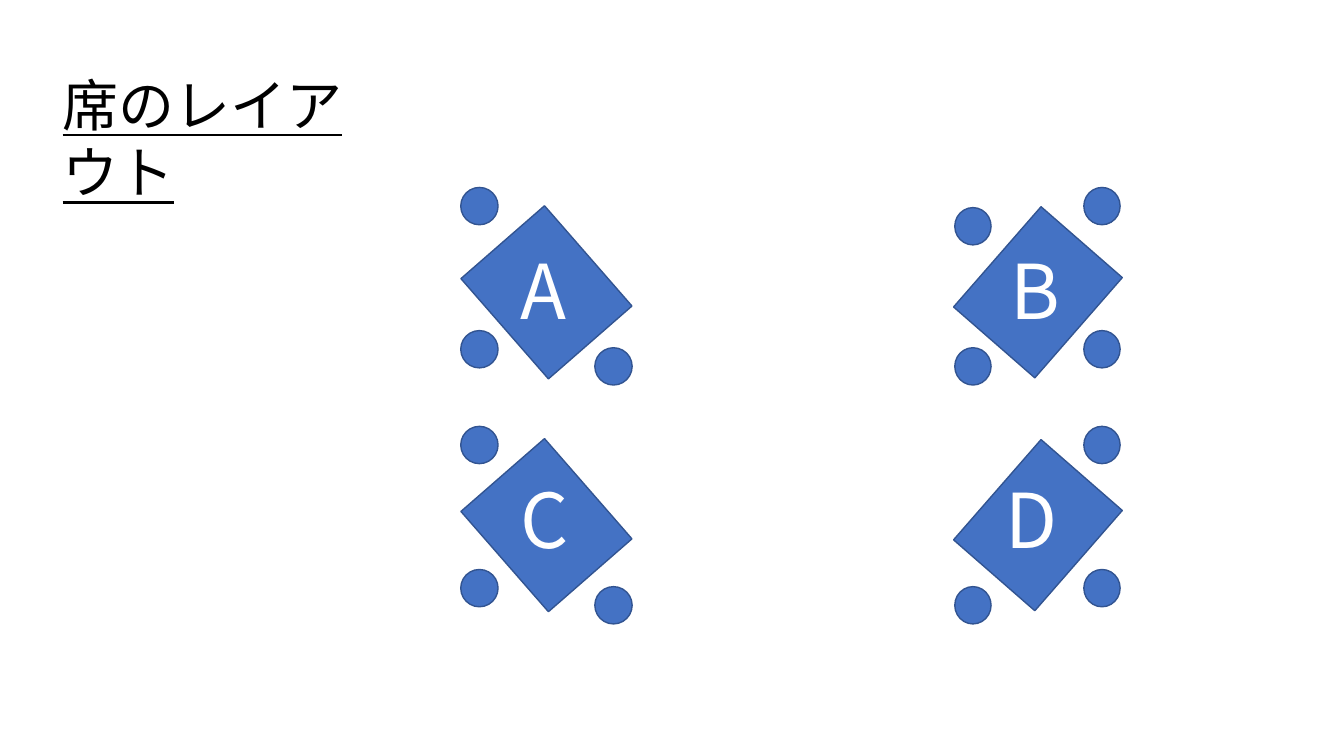
from pptx import Presentation
from pptx.dml.color import RGBColor
from pptx.enum.shapes import MSO_SHAPE
from pptx.enum.text import MSO_ANCHOR, MSO_AUTO_SIZE, PP_ALIGN
from pptx.oxml.ns import qn
from pptx.util import Inches, Pt
from lxml.etree import SubElement

TITLE = "席のレイアウト"
FONT = "Noto Sans CJK JP"
BLUE = RGBColor(0x44, 0x72, 0xC4)
OUTLINE = RGBColor(0x32, 0x54, 0x91)
WHITE = RGBColor(0xFF, 0xFF, 0xFF)
BLACK = RGBColor(0, 0, 0)

# Two columns of tables; the right one mirrors the left one.
COLUMNS = [
    dict(table_x=4.87, table_w=1.10, angle=-41.1, outer_x=4.57, inner_x=5.90,
         seat_w=0.37, labels=[("A", 5.06), ("C", 5.06)]),
    dict(table_x=9.76, table_w=1.07, angle=41.1, outer_x=10.75, inner_x=9.47,
         seat_w=0.36, labels=[("B", 9.92), ("D", 9.87)]),
]
ROWS = 2
TABLE_TOP, TABLE_PITCH, TABLE_H = 2.24, 2.31, 1.32
SEAT_PITCH, SEAT_H = 2.37, 0.37
SEATS = [("outer_x", 1.86), ("outer_x", 3.28), ("inner_x", 3.45)]
EXTRA_SEAT_TOP = 2.06
LABEL_TOP, LABEL_PITCH, LABEL_W, LABEL_H = 2.37, 2.27, 0.71, 1.01


def add_blue_shape(shapes, kind, x, y, w, h, angle=0):
    shape = shapes.add_shape(kind, Inches(x), Inches(y), Inches(w), Inches(h))
    shape.rotation = angle
    shape.shadow.inherit = False
    shape.fill.solid()
    shape.fill.fore_color.rgb = BLUE
    shape.line.color.rgb = OUTLINE
    shape.line.width = Pt(1)


def add_seat(shapes, column, side, y):
    add_blue_shape(shapes, MSO_SHAPE.OVAL, column[side], y, column["seat_w"], SEAT_H)


def write(shape, text, size, color, underline=None):
    frame = shape.text_frame
    frame.text = text
    frame.word_wrap = True
    frame.auto_size = MSO_AUTO_SIZE.NONE
    frame.vertical_anchor = MSO_ANCHOR.TOP
    paragraph = frame.paragraphs[0]
    paragraph.alignment = PP_ALIGN.LEFT
    paragraph.line_spacing = Pt(size * 1.2)
    paragraph.space_before = Pt(0)
    font = paragraph.font
    font.name, font.size, font.underline = FONT, Pt(size), underline
    font.color.rgb = color
    east_asian = SubElement(paragraph._p.pPr.find(qn("a:defRPr")), qn("a:ea"))
    east_asian.set("typeface", FONT)
    # The title's own style outranks paragraph defaults, so the run states them too.
    run = paragraph.runs[0]
    run.font.name, run.font.size, run.font.underline = FONT, Pt(size), underline
    run.font.color.rgb = color
    SubElement(run.font._element, qn("a:ea")).set("typeface", FONT)


def main():
    deck = Presentation()
    deck.slide_width, deck.slide_height = Inches(13.33), Inches(7.5)
    slide = deck.slides.add_slide(deck.slide_layouts[5])

    for column in COLUMNS:
        group = slide.shapes.add_group_shape().shapes
        for row in range(ROWS):
            add_blue_shape(group, MSO_SHAPE.RECTANGLE, column["table_x"],
                           TABLE_TOP + row * TABLE_PITCH, column["table_w"],
                           TABLE_H, column["angle"])
        for row in range(ROWS):
            for side, top in SEATS:
                add_seat(group, column, side, top + row * SEAT_PITCH)

    for column in COLUMNS:
        for row, (letter, x) in enumerate(column["labels"]):
            label = slide.shapes.add_textbox(
                Inches(x), Inches(LABEL_TOP + row * LABEL_PITCH),
                Inches(LABEL_W), Inches(LABEL_H))
            write(label, letter, 54, WHITE)

    title = slide.shapes.title
    title.left, title.top = Inches(0.52), Inches(0.65)
    title.width, title.height = Inches(3.28), Inches(0.77)
    write(title, TITLE, 40, BLACK, underline=True)

    add_seat(slide.shapes, COLUMNS[1], "inner_x", EXTRA_SEAT_TOP)
    deck.save("out.pptx")


if __name__ == "__main__":
    main()
